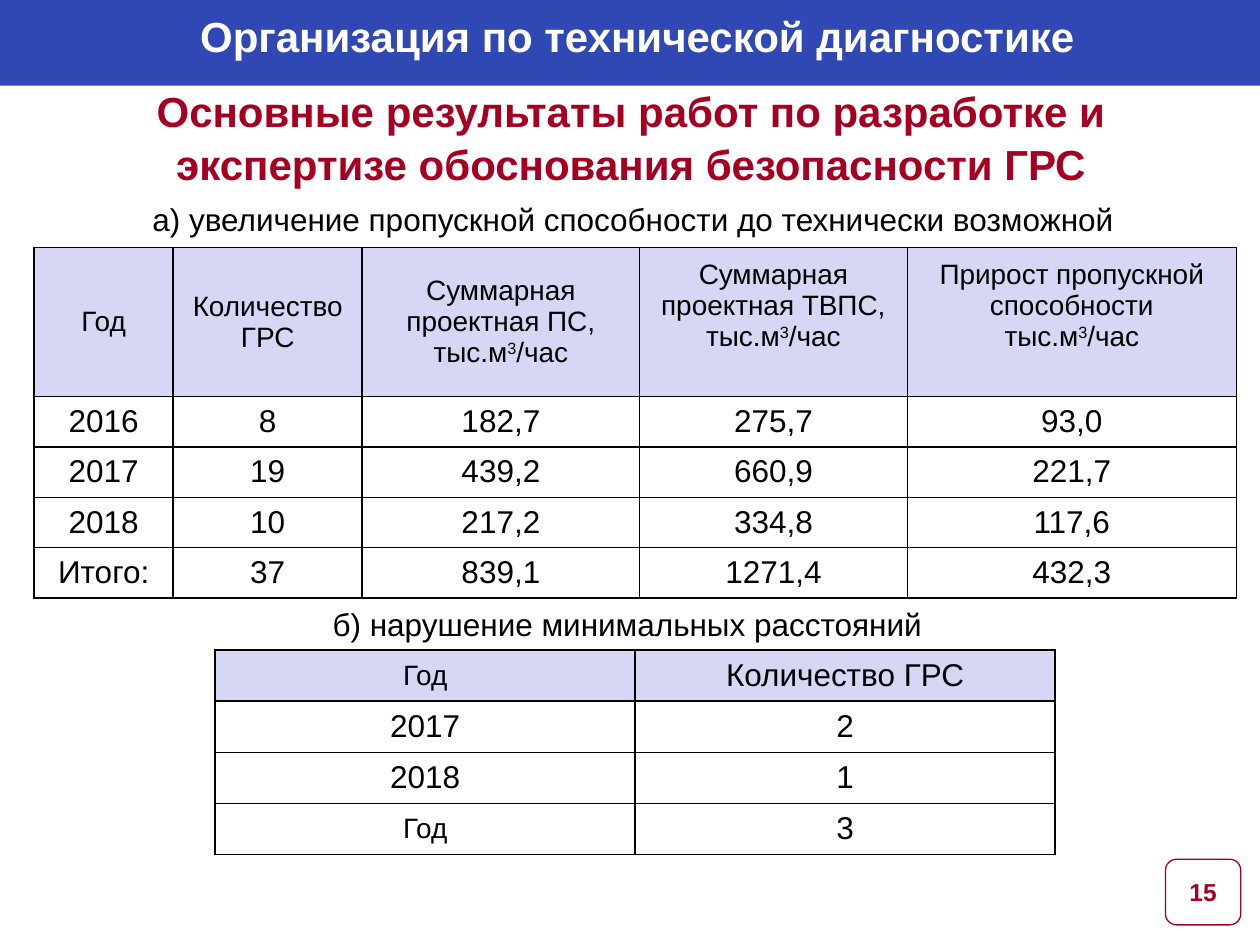
import pptx
import pptx.util
import pptx.dml.color
import pptx.enum.shapes
import pptx.enum.text
import lxml.etree

Pt = pptx.util.Pt
RGB = pptx.dml.color.RGBColor.from_string
ALIGN = pptx.enum.text.PP_ALIGN
ANCHOR = pptx.enum.text.MSO_ANCHOR
SHAPE = pptx.enum.shapes.MSO_SHAPE

# Content; text between bars is raised
FIRM = "Организация по технической диагностике"
TITLE = "Основные результаты работ по разработке и экспертизе обоснования безопасности ГРС"
PAGE = "15"
NOTES = [
    ("а) увеличение пропускной способности до технически возможной", (80, 111, 569.5, 29)),
    ("б) нарушение минимальных расстояний", (183, 342, 355, 29)),
]
GROWTH = [
    ["Год", "Количество ГРС", "Суммарная проектная ПС, тыс.м|3|/час",
     "Суммарная проектная ТВПС, тыс.м|3|/час",
     "Прирост пропускной способности\nтыс.м|3|/час"],
    ["2016", "8", "182,7", "275,7", "93,0"],
    ["2017", "19", "439,2", "660,9", "221,7"],
    ["2018", "10", "217,2", "334,8", "117,6"],
    ["Итого:", "37", "839,1", "1271,4", "432,3"],
]
LIMITS = [
    ["Год", "Количество ГРС"],
    ["2017", "2"],
    ["2018", "1"],
    ["Год", "3"],
]

THEME = {
    "font": "Arial", "bar": "2F48B3", "accent": "A50021", "head": "D6D6F5",
    "ink": "000000", "white": "FFFFFF",
    "title": 24, "body": 18, "label": 16, "page": 14,
}


def style(run, size, color, bold=False):
    font = run.font
    font.name, font.size, font.bold = THEME["font"], Pt(THEME[size]), bold
    font.color.rgb = RGB(THEME[color])


def write(shape, text, size, color, bold=False, align=ALIGN.CENTER):
    frame = shape.text_frame
    frame.text = text
    para = frame.paragraphs[0]
    para.alignment = align
    style(para.runs[0], size, color, bold)
    return frame


def border(cell):
    props = cell._tc.get_or_add_tcPr()
    for side in ("lnL", "lnR", "lnT", "lnB"):
        props.append(lxml.etree.fromstring(
            f'<a:{side} xmlns:a="http://schemas.openxmlformats.org/drawingml/2006/main" w="12700">'
            f'<a:solidFill><a:srgbClr val="{THEME["ink"]}"/></a:solidFill></a:{side}>'))


def fill_cell(cell, text, size, head):
    border(cell)
    if head:
        cell.fill.solid()
        cell.fill.fore_color.rgb = RGB(THEME["head"])
    else:
        cell.fill.background()
    cell.vertical_anchor = ANCHOR.MIDDLE
    frame = cell.text_frame
    for i, line in enumerate(text.split("\n")):
        para = frame.add_paragraph() if i else frame.paragraphs[0]
        para.alignment = ALIGN.CENTER
        for j, part in enumerate(line.split("|")):
            run = para.add_run()
            run.text = part
            style(run, size, "ink")
            if j % 2:
                run.font._element.set("baseline", "30000")


def add_grid(slide, data, left, top, widths, heights, small):
    grid = slide.shapes.add_table(len(data), len(widths), Pt(left), Pt(top),
                                  Pt(sum(widths)), Pt(sum(heights))).table
    grid.first_row = grid.horz_banding = False
    for col, width in zip(grid.columns, widths):
        col.width = Pt(width)
    for r, (row, height) in enumerate(zip(data, heights)):
        grid.rows[r].height = Pt(height)
        for c, text in enumerate(row):
            size = "label" if small(r, c) else "body"
            fill_cell(grid.cell(r, c), text, size, r == 0)
    return grid


def main():
    deck = pptx.Presentation()
    deck.slide_width, deck.slide_height = Pt(720), Pt(540)
    slide = deck.slides.add_slide(deck.slide_layouts[5])
    shapes = slide.shapes

    # Top bar with the firm name
    bar = shapes.add_shape(SHAPE.RECTANGLE, 0, 0, Pt(720), Pt(49))
    bar.shadow.inherit = False
    bar.fill.solid()
    bar.fill.fore_color.rgb = RGB(THEME["bar"])
    bar.line.fill.background()
    firm = shapes.add_textbox(Pt(8.5), 0, Pt(711.5), Pt(49))
    frame = write(firm, FIRM, "title", "white", True)
    frame.word_wrap = True
    frame.margin_top = Pt(6)

    # Title
    title = shapes.title
    title.left, title.top, title.width, title.height = Pt(14), Pt(49), Pt(693), Pt(57)
    frame = write(title, TITLE, "title", "accent", True)
    frame.vertical_anchor = ANCHOR.MIDDLE
    frame.paragraphs[0].line_spacing = 1.05

    # Captions above the tables
    for text, place in NOTES:
        note = shapes.add_textbox(*map(Pt, place))
        frame = write(note, text, "body", "ink", align=ALIGN.LEFT)
        frame.word_wrap = False

    # Tables
    grid = add_grid(slide, GROWTH, 19.5, 141.5, [79.5, 108, 158.5, 153, 188],
                    [85] + [28] * 4, lambda r, c: r == 0)
    for c in (3, 4):
        grid.cell(0, c).margin_bottom = Pt(22)
    add_grid(slide, LIMITS, 123, 371.5, [240] * 2, [29.2] * 4,
             lambda r, c: c == 0 and r in (0, 3))

    # Page number
    badge = shapes.add_shape(SHAPE.ROUNDED_RECTANGLE, Pt(666), Pt(491), Pt(43), Pt(37.5))
    badge.shadow.inherit = False
    badge.fill.background()
    badge.line.color.rgb = RGB(THEME["accent"])
    badge.line.width = Pt(0.75)
    write(badge, PAGE, "page", "accent", True).vertical_anchor = ANCHOR.MIDDLE

    deck.save("out.pptx")


if __name__ == "__main__":
    main()
